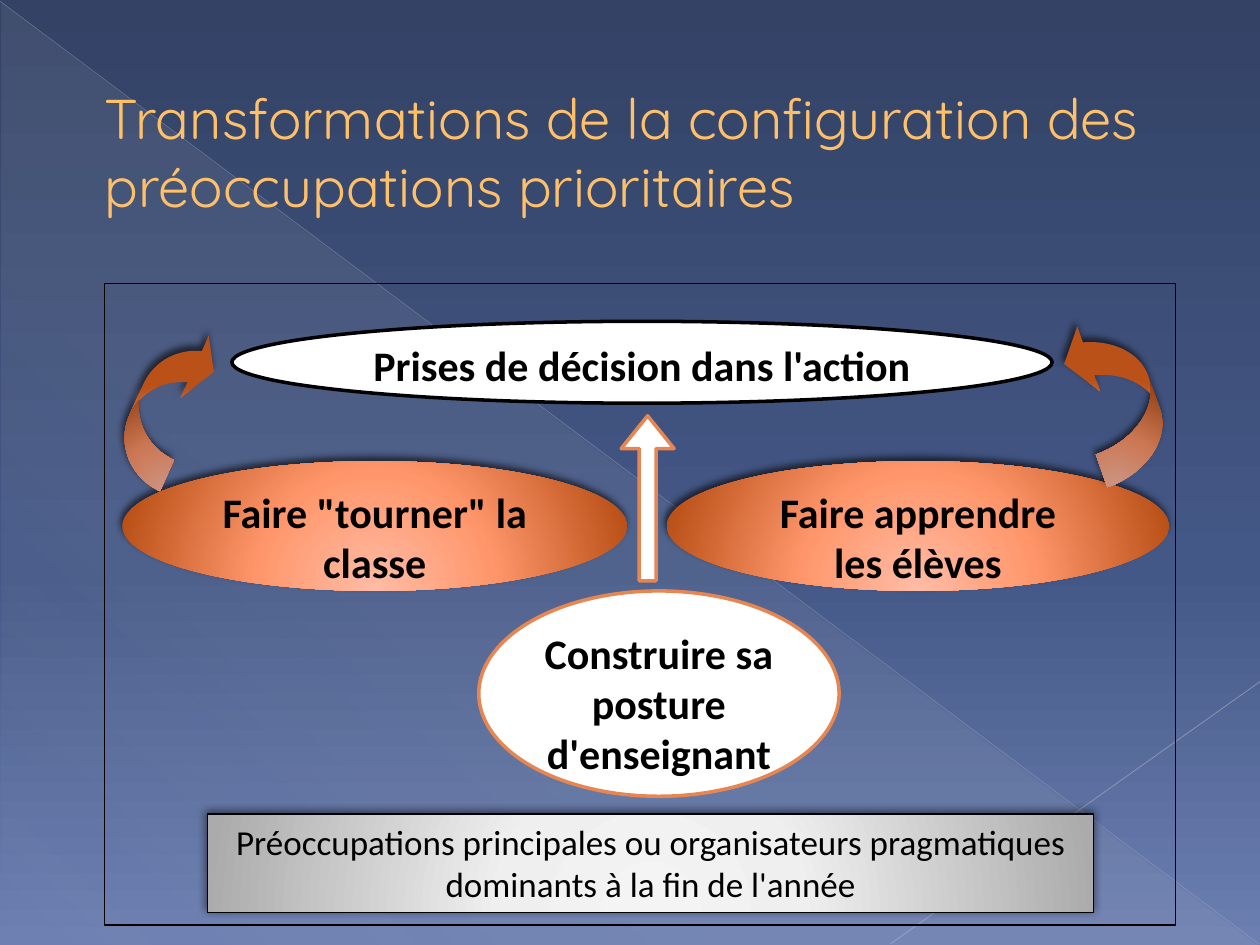
from dataclasses import dataclass

from lxml import etree
from pptx import Presentation
from pptx.dml.color import RGBColor
from pptx.enum.shapes import MSO_CONNECTOR, MSO_SHAPE
from pptx.enum.text import MSO_ANCHOR, PP_ALIGN
from pptx.oxml.ns import qn
from pptx.util import Emu, Pt

PX = 9144  # one px is a hundredth of an inch
TITLE_ONLY = 5
OVAL, RECT = MSO_SHAPE.OVAL, MSO_SHAPE.RECTANGLE
TRIANGLE, UP_ARROW = MSO_SHAPE.RIGHT_TRIANGLE, MSO_SHAPE.UP_ARROW
CURVED_DOWN, CURVED_UP = MSO_SHAPE.CURVED_DOWN_ARROW, MSO_SHAPE.CURVED_UP_ARROW
STRAIGHT = MSO_CONNECTOR.STRAIGHT
LEFT, CENTER = PP_ALIGN.LEFT, PP_ALIGN.CENTER
TOP, MIDDLE = MSO_ANCHOR.TOP, MSO_ANCHOR.MIDDLE


@dataclass(frozen=True)
class Theme:
    title_font: str = "Quicksand"
    body_font: str = "Calibri"
    title_size: int = 32
    concern_size: int = 24
    caption_size: int = 20
    title: str = "FFC06A"
    ink: str = "000000"
    paper: str = "FFFFFF"
    accent: str = "E88651"
    # Gradient stops: position, colour, opacity (all in percent)
    sky: tuple = ((0, "334265", 100), (60, "445887", 100), (100, "6C7FB1", 100))
    veil: tuple = ((0, "D4D4D6", 10), (70, "D4D4D6", 8), (100, "D4D4D6", 1))
    copper: tuple = ((0, "FFBCA6", 100), (46, "FF966B", 100), (100, "BA5118", 100))
    silver: tuple = ((0, "F4F4F4", 100), (34, "EFEFEF", 100), (100, "ABABAB", 100))
    # Shadows: opacity in percent, blur and distance in points
    copper_shadow: tuple = (60, 4, 3)
    silver_shadow: tuple = (50, 5, 2)


THEME = Theme()


def px(*lengths):
    return [Emu(length * PX) for length in lengths]


def child(parent, tag, **attributes):
    values = {key: str(value) for key, value in attributes.items()}
    return etree.SubElement(parent, qn(tag), values)


def set_gradient(fill, owner, stops, angle=None):
    """Linear gradient at an angle, or a glow from below without one."""
    fill.solid()
    solid = owner.find(qn("a:solidFill"))
    gradient = etree.Element(qn("a:gradFill"), rotWithShape="1")
    stop_list = child(gradient, "a:gsLst")
    for position, color, opacity in stops:
        stop = child(stop_list, "a:gs", pos=position * 1000)
        tint = child(stop, "a:srgbClr", val=color)
        if opacity < 100:
            child(tint, "a:alpha", val=opacity * 1000)
    if angle is None:
        glow = child(gradient, "a:path", path="circle")
        child(glow, "a:fillToRect", l=50000, t=155000, r=50000, b=-55000)
    else:
        child(gradient, "a:lin", ang=angle * 60000, scaled=0)
    owner.replace(solid, gradient)


def set_shadow(shape, opacity, blur, distance):
    effects = shape.element.spPr.find(qn("a:effectLst"))
    shadow = child(effects, "a:outerShdw", blurRad=Pt(blur), dist=Pt(distance),
                   dir=245 * 60000, algn="ctr", rotWithShape=0)
    child(child(shadow, "a:srgbClr", val=THEME.ink), "a:alpha", val=opacity * 1000)


def add_part(slide, preset, box, fill=None, gradient=None, angle=None,
             line=None, line_width=1, shadow=None, adjust=(), rotation=0):
    shape = slide.shapes.add_shape(preset, *px(*box))
    shape.shadow.inherit = False
    for index, value in enumerate(adjust):
        shape.adjustments[index] = value
    shape.rotation = rotation
    if gradient:
        set_gradient(shape.fill, shape.element.spPr, gradient, angle)
    elif fill:
        shape.fill.solid()
        shape.fill.fore_color.rgb = RGBColor.from_string(fill)
    else:
        shape.fill.background()
    if line:
        shape.line.color.rgb = RGBColor.from_string(line)
        shape.line.width = Pt(line_width)
    else:
        shape.line.fill.background()
    if shadow:
        set_shadow(shape, *shadow)
    return shape


def write(shape, text, font, size, color, bold=False, align=CENTER, anchor=TOP):
    frame = shape.text_frame
    frame.text = text
    frame.word_wrap = True
    frame.vertical_anchor = anchor
    paragraph = frame.paragraphs[0]
    paragraph.alignment = align
    paragraph.font.name = font
    paragraph.font.size = Pt(size)
    paragraph.font.bold = bold
    paragraph.font.color.rgb = RGBColor.from_string(color)
    return paragraph


def add_ray(slide, ends, color, width, opacity):
    ray = slide.shapes.add_connector(STRAIGHT, *px(*ends))
    ray.line.color.rgb = RGBColor.from_string(color)
    ray.line.width = Pt(width)
    properties = ray.element.spPr
    child(properties.find(".//" + qn("a:srgbClr")), "a:alpha", val=opacity * 1000)
    child(properties, "a:effectLst")


def build_backdrop(slide, width, height):
    fill = slide.background.fill
    fill.solid()
    set_gradient(fill, slide.element.find(".//" + qn("p:bgPr")), THEME.sky, 90)
    add_part(slide, TRIANGLE, (1, 2, width - 2, height - 2),
             gradient=THEME.veil, angle=133)
    add_ray(slide, (0, 1, width - 1, height - 1), "B9BDC8", 0.39, 35)
    add_ray(slide, (width, 541, 707, height - 1), "C1C4CE", 0.47, 45)


def build_title(slide, box, text):
    title = slide.shapes.title
    slide.shapes.element.append(title.element)  # bring in front of the backdrop
    title.left, title.top, title.width, title.height = px(*box)
    paragraph = write(title, text, THEME.title_font, THEME.title_size,
                      THEME.title, align=LEFT, anchor=MIDDLE)
    properties = paragraph.font._element.getparent()
    properties.set("marL", str(53 * PX))
    properties.set("indent", "0")


def build_diagram(slide, box):
    left, top, width, height = box
    copper = {"gradient": THEME.copper, "shadow": THEME.copper_shadow}
    outlined = {"fill": THEME.paper, "line": THEME.accent, "line_width": 2}
    decision = {**outlined, "line": THEME.ink}

    def place(preset, x, y, w, h, **style):
        return add_part(slide, preset, (left + x, top + y, w, h), **style)

    # Frame
    add_part(slide, RECT, box, line=THEME.ink)

    # Concerns and the decisions they feed
    concerns = (
        ("Faire apprendre les élèves", (446, 141, 399, 103), copper),
        ("Faire \"tourner\" la classe", (14, 141, 401, 103), copper),
        ("Construire sa posture d'enseignant", (297, 244, 286, 163), outlined),
        ("Prises de décision dans l'action", (101, 30, 651, 65), decision),
    )
    for text, place_box, style in concerns:
        write(place(OVAL, *place_box, **style), text, THEME.body_font,
              THEME.concern_size, THEME.ink, bold=True)

    # Arrows towards the decisions
    place(UP_ARROW, 410, 105, 42, 131, adjust=(0.32, 0.62), **outlined)
    place(CURVED_DOWN, -16, 72, 131, 47, rotation=294.3,
          adjust=(0.58, 1.15, 0.33), **copper)
    place(CURVED_UP, 737, 60, 131, 60, rotation=250.7,
          adjust=(0.46, 0.91, 0.33), **copper)

    # Caption
    caption = place(RECT, 82, 421, 703, 78, gradient=THEME.silver,
                    line=THEME.ink, line_width=0.75, shadow=THEME.silver_shadow)
    write(caption, "Préoccupations principales ou organisateurs pragmatiques "
          "dominants à la fin de l'année",
          THEME.body_font, THEME.caption_size, THEME.ink)


def main():
    width, height = 1000, 750
    deck = Presentation()
    deck.slide_width, deck.slide_height = px(width, height)
    slide = deck.slides.add_slide(deck.slide_layouts[TITLE_ONLY])
    build_backdrop(slide, width, height)
    build_title(slide, (20, 29, 953, 182),
                "Transformations de la configuration des préoccupations prioritaires")
    build_diagram(slide, (83, 225, 850, 509))
    deck.save("out.pptx")


if __name__ == "__main__":
    main()
